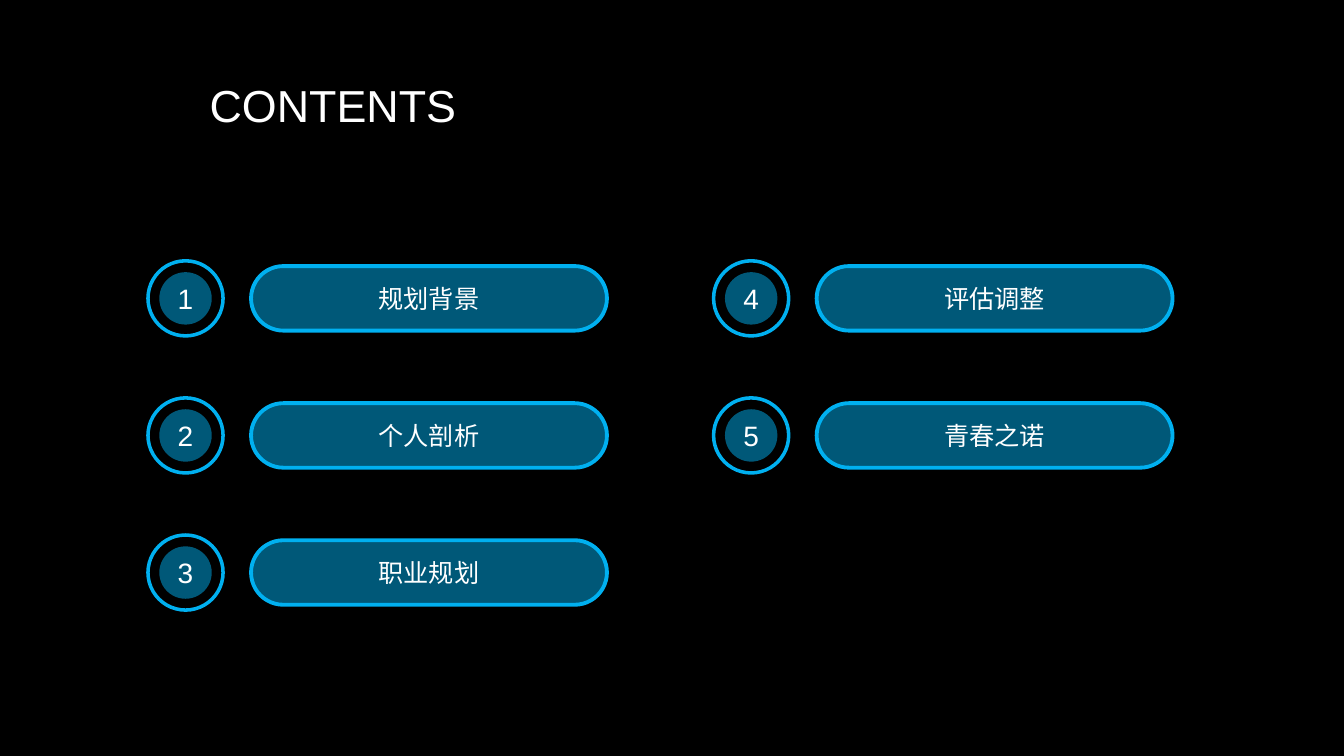
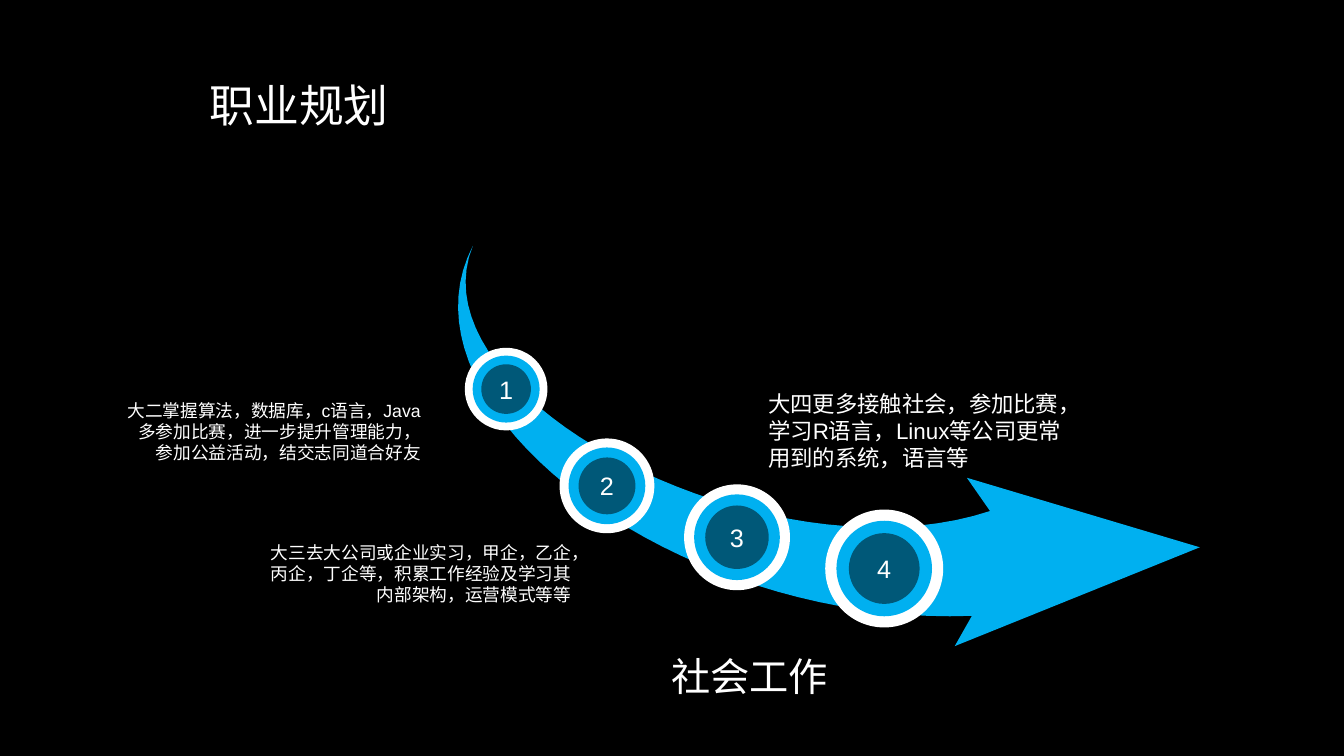
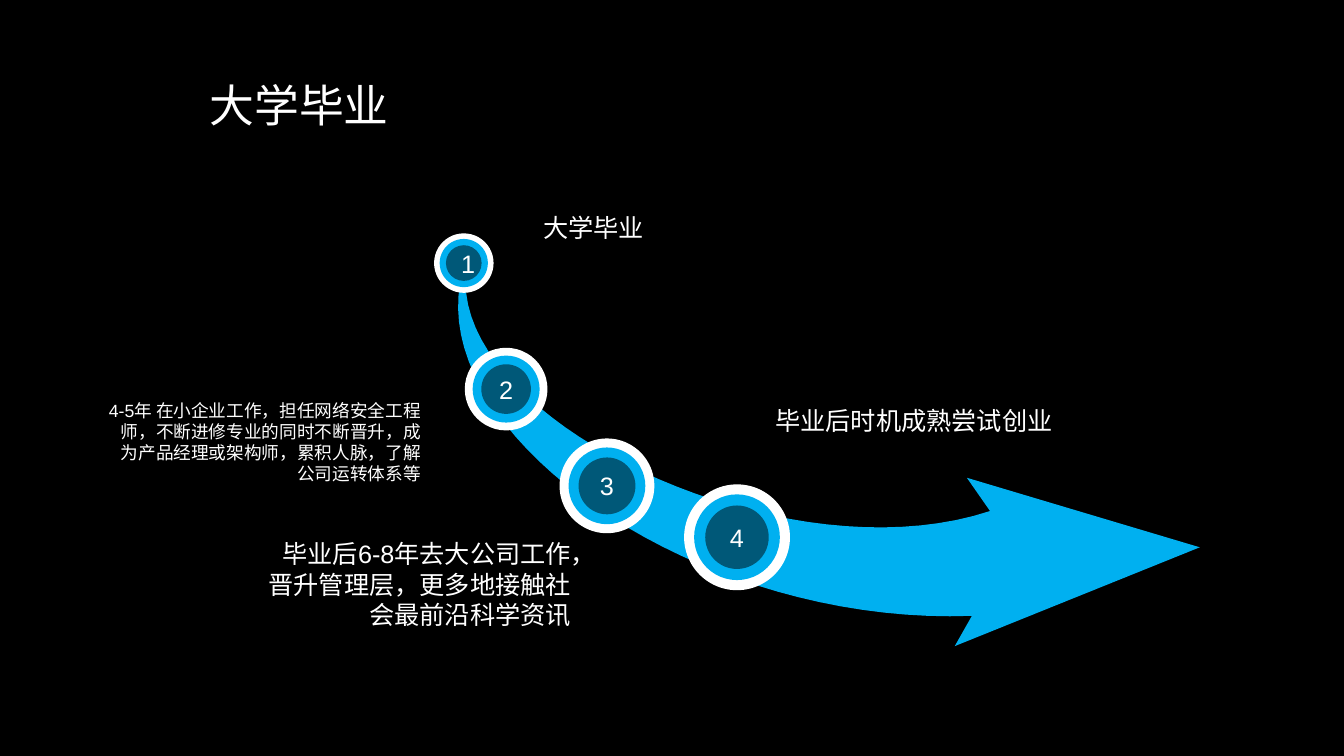
from pptx import Presentation
from pptx.dml.color import RGBColor
from pptx.enum.shapes import MSO_SHAPE
from pptx.enum.text import MSO_ANCHOR, PP_ALIGN
from pptx.util import Inches, Pt

BLACK, WHITE = "000000", "FFFFFF"
BRIGHT_BLUE, DEEP_BLUE = "00B0F0", "005878"
FONT = "Arial"
STATIONS = [(4.6, 2.61, 0.59), (5.02, 3.86, 0.82), (6.02, 4.82, 0.94),
            (7.31, 5.33, 1.05), (8.77, 5.64, 1.17)]
CAPTION_WIDTH = 3.29


def paint(target, color):
    target.solid()
    target.fore_color.rgb = RGBColor.from_string(color)


def write(shape, text, size, align, line_spacing=None):
    frame = shape.text_frame
    frame.word_wrap = True
    frame.vertical_anchor = MSO_ANCHOR.MIDDLE
    frame.text = text
    for paragraph in frame.paragraphs:
        paragraph.alignment = align
        if line_spacing:
            paragraph.line_spacing = line_spacing
        for run in paragraph.runs:
            run.font.name = FONT
            run.font.size = Pt(size)
            run.font.color.rgb = RGBColor.from_string(WHITE)


def style(shape, fill, line=None):
    shape.shadow.inherit = False
    paint(shape.fill, fill)
    if line:
        paint(shape.line.fill, line)
        shape.line.width = Pt(2.75)
    else:
        shape.line.fill.background()


def add_shape(slide, kind, left, top, width, height, fill, line=None):
    shape = slide.shapes.add_shape(kind, Inches(left), Inches(top), Inches(width), Inches(height))
    style(shape, fill, line)
    return shape


def add_disc(slide, center_x, center_y, diameter, fill, kind=MSO_SHAPE.OVAL):
    return add_shape(slide, kind, center_x - diameter / 2, center_y - diameter / 2,
                     diameter, diameter, fill)


def add_text(slide, left, top, width, height, text, size, align=PP_ALIGN.LEFT, line_spacing=None):
    box = slide.shapes.add_textbox(Inches(left), Inches(top), Inches(width), Inches(height))
    write(box, text, size, align, line_spacing)


def add_titled_slide(presentation, title):
    slide = presentation.slides.add_slide(presentation.slide_layouts[6])
    add_text(slide, 1.98, 0.35, 5.69, 1.45, title, 32, line_spacing=0.9)
    return slide


def add_contents_entry(slide, left, top, number, label):
    center_x, center_y = left + 0.39, top + 0.39
    ring = add_disc(slide, center_x, center_y, 0.78, BRIGHT_BLUE, MSO_SHAPE.DONUT)
    ring.adjustments[0] = 0.045
    disc = add_disc(slide, center_x, center_y, 0.52, DEEP_BLUE)
    write(disc, str(number), 20, PP_ALIGN.CENTER)
    pill = add_shape(slide, MSO_SHAPE.ROUNDED_RECTANGLE, left + 1.04, top + 0.07, 3.53, 0.64,
                     DEEP_BLUE, BRIGHT_BLUE)
    pill.adjustments[0] = 0.5
    write(pill, label, 18, PP_ALIGN.CENTER)


def curve(start, control_1, control_2, end, steps=40):
    points = []
    for step in range(1, steps + 1):
        t = step / steps
        u = 1 - t
        points.append(tuple(u ** 3 * a + 3 * u * u * t * b + 3 * u * t * t * c + t ** 3 * d
                            for a, b, c, d in zip(start, control_1, control_2, end)))
    return points


def add_curved_arrow(slide, left, top):
    tail, neck_top, neck_bottom = (0.15, 0), (5.28, 2.63), (5.1, 3.67)
    outline = curve(tail, (-0.47, 1.53), (3.1, 3.35), neck_top)
    outline += [(5.05, 2.3), (7.36, 2.99), (4.93, 3.97), neck_bottom]
    outline += curve(neck_bottom, (2.17, 3.78), (-0.68, 1.61), tail)
    place = [(Inches(left + x), Inches(top + y)) for x, y in [tail] + outline]
    builder = slide.shapes.build_freeform(*place[0])
    builder.add_line_segments(place[1:], close=True)
    style(builder.convert_to_shape(), BRIGHT_BLUE)


def add_station(slide, center_x, center_y, diameter, number):
    add_disc(slide, center_x, center_y, diameter, WHITE)
    add_disc(slide, center_x, center_y, diameter * 0.81, BRIGHT_BLUE)
    core = add_disc(slide, center_x, center_y, diameter * 0.6, DEEP_BLUE)
    write(core, str(number), 18, PP_ALIGN.CENTER)


def contents_slide(presentation, labels):
    slide = add_titled_slide(presentation, "CONTENTS")
    for index, label in enumerate(labels):
        column, row = divmod(index, 3)
        add_contents_entry(slide, 1.45 + column * 5.61, 2.57 + row * 1.36, index + 1, label)


def roadmap_slide(presentation, title, stations, captions):
    slide = add_titled_slide(presentation, title)
    add_curved_arrow(slide, 4.54, 2.44)
    for number, station in enumerate(stations, 1):
        add_station(slide, *station, number)
    for left, top, height, text, size, align in captions:
        add_text(slide, left, top, CAPTION_WIDTH, height, text, size, align)


def main():
    presentation = Presentation()
    presentation.slide_width = Inches(13.33)
    presentation.slide_height = Inches(7.5)
    paint(presentation.slide_master.background.fill, BLACK)

    contents_slide(presentation, ["规划背景", "个人剖析", "职业规划", "评估调整", "青春之诺"])
    roadmap_slide(presentation, "职业规划", STATIONS[1:], [
        (0.98, 3.9, 0.76,
         "大二掌握算法，数据库，c语言，Java\n多参加比赛，进一步提升管理能力，\n参加公益活动，结交志同道合好友",
         12.6, PP_ALIGN.RIGHT),
        (2.47, 5.31, 0.76,
         "大三去大公司或企业实习，甲企，乙企，丙企，丁企等，积累工作经验及学习其内部架构，运营模式等等",
         12.6, PP_ALIGN.RIGHT),
        (7.52, 3.93, 0.68,
         "大四更多接触社会，参加比赛，学习R语言，Linux等公司更常用到的系统，语言等",
         16, PP_ALIGN.LEFT),
        (5.02, 6.22, 0.97, "社会工作", 28, PP_ALIGN.RIGHT),
    ])
    roadmap_slide(presentation, "大学毕业", STATIONS[:4], [
        (5.29, 1.77, 0.97, "大学毕业", 18, PP_ALIGN.LEFT),
        (0.98, 3.9, 0.97,
         "4-5年 在小企业工作，担任网络安全工程师，不断进修专业的同时不断晋升，"
         "成为产品经理或架构师，累积人脉，了解公司运转体系等",
         12.6, PP_ALIGN.RIGHT),
        (2.47, 5.31, 0.97,
         "毕业后6-8年去大公司工作，晋升管理层，更多地接触社会最前沿科学资讯",
         18, PP_ALIGN.RIGHT),
        (7.59, 3.69, 0.97, "毕业后时机成熟尝试创业", 18, PP_ALIGN.LEFT),
    ])
    presentation.save("out.pptx")


if __name__ == "__main__":
    main()
